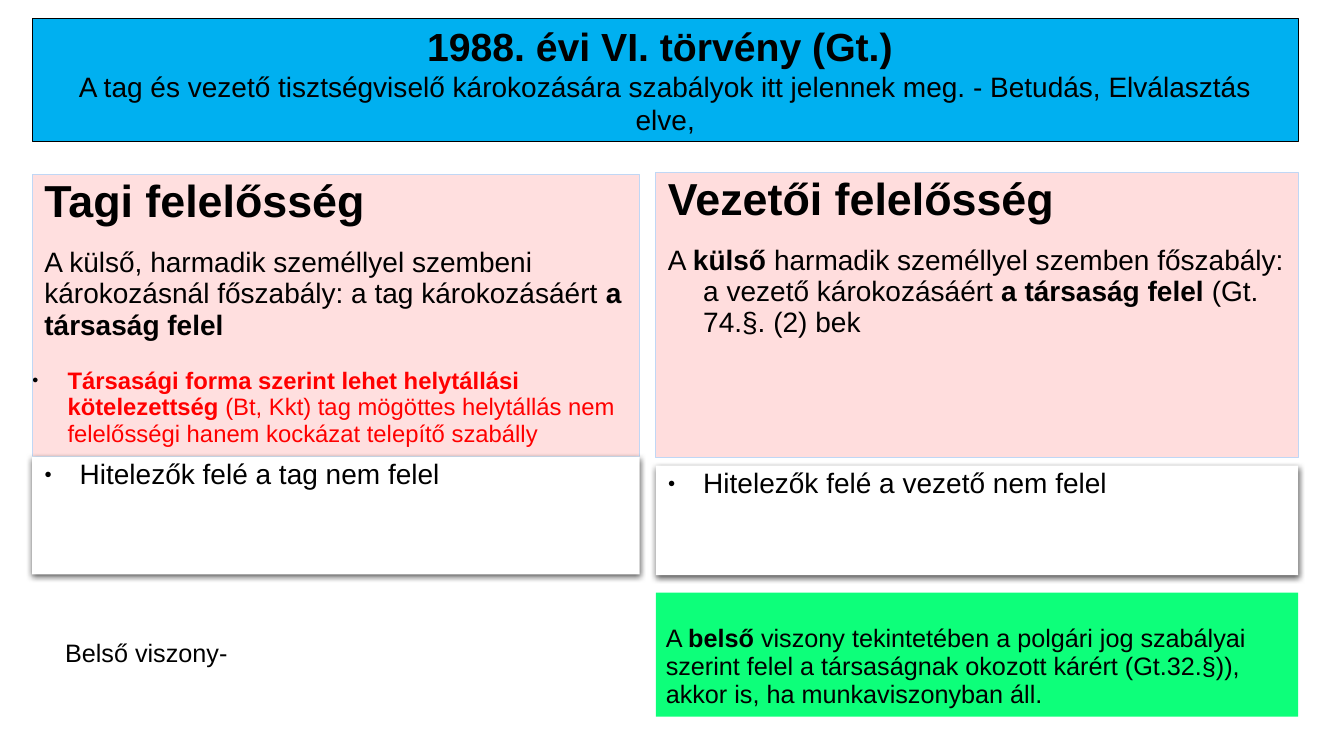
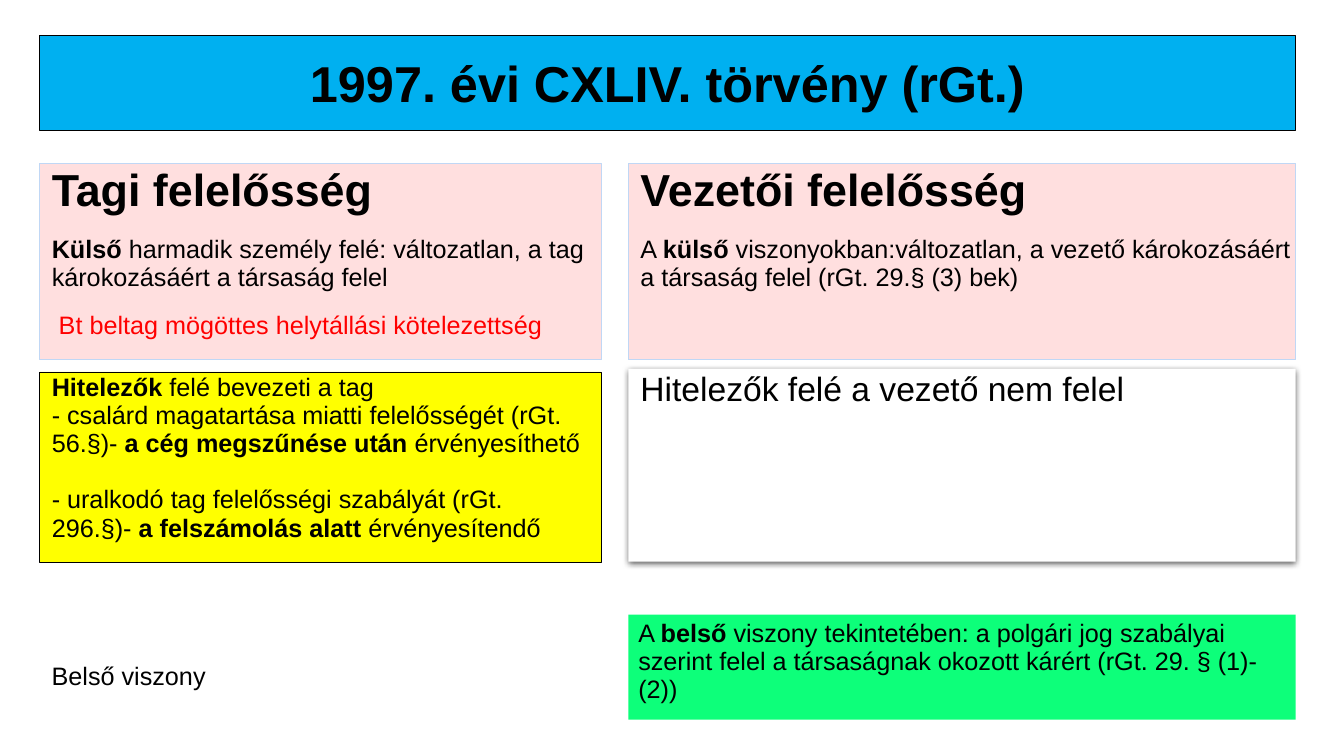
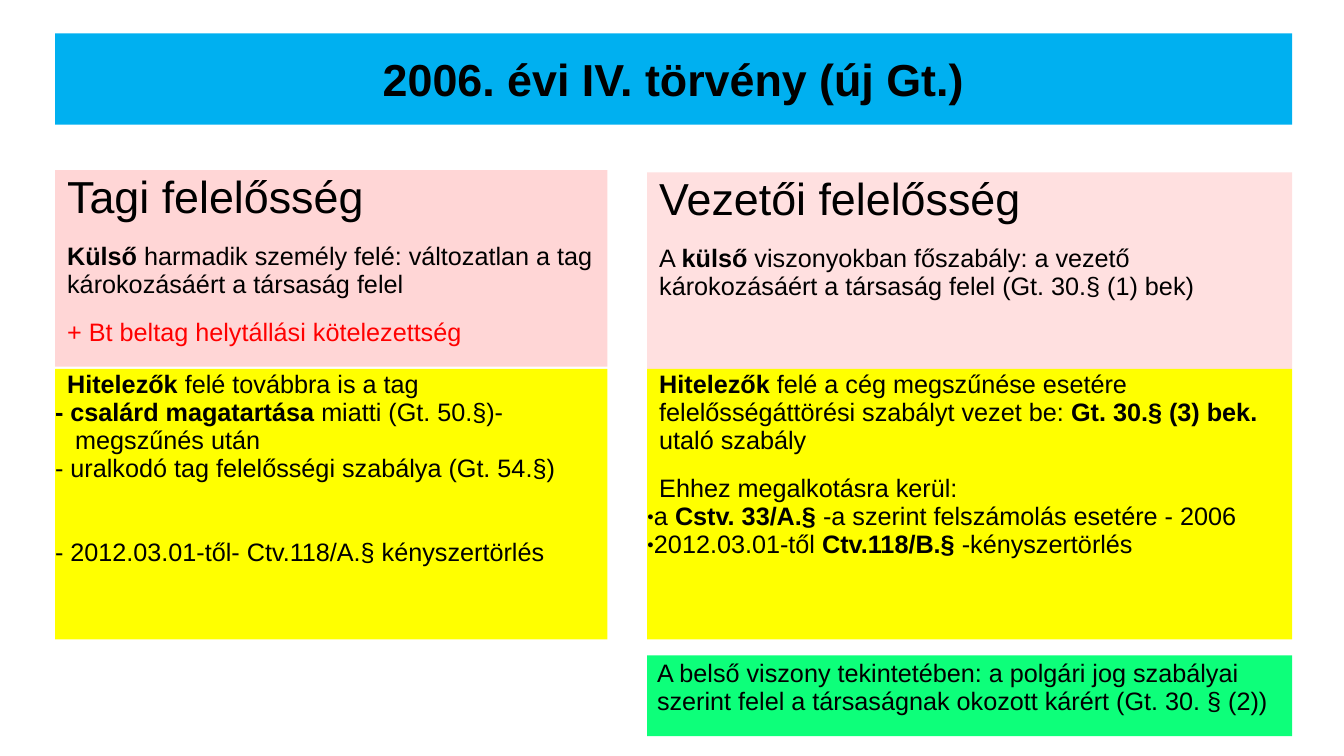
from dataclasses import dataclass
from typing import Optional

from lxml.etree import SubElement
from pptx import Presentation
from pptx.dml.color import RGBColor
from pptx.enum.shapes import MSO_SHAPE as Preset
from pptx.enum.text import MSO_ANCHOR as Anchor, MSO_AUTO_SIZE as AutoSize, PP_ALIGN as Align
from pptx.oxml.ns import qn
from pptx.util import Emu, Inches, Pt


@dataclass(frozen=True)
class Theme:
    font: str = "Arial"
    black: str = "000000"
    white: str = "FFFFFF"
    red: str = "FF0000"
    blue: str = "00B0F0"
    pink: str = "FF8585"
    pale_blue: str = "C0D7F5"
    yellow: str = "FFFF00"
    green: str = "0DFF7A"
    heading: int = 32
    large: int = 24
    medium: int = 20
    body: int = 18
    small: int = 17
    leading: float = 0.93
    gap: float = 14.2


THEME = Theme()
SLIDE_WIDTH, SLIDE_HEIGHT = Inches(13.33), Inches(7.5)


@dataclass(frozen=True)
class Extent:
    start: float
    size: float

    @property
    def end(self) -> float:
        return self.start + self.size


@dataclass(frozen=True)
class Para:
    text: str
    size: int = THEME.body
    color: str = THEME.black
    margin: float = 0.12
    indent: float = 0
    before: float = THEME.gap
    bullet: bool = False
    leading: float = THEME.leading


@dataclass(frozen=True)
class Style:
    fill: Optional[str] = None
    alpha: int = 100
    line: Optional[str] = None
    shadow: bool = False
    insets: tuple = (0, 0.03, 0, 0)


@dataclass(frozen=True)
class Panel:
    column: Extent
    row: Extent
    style: Style
    paras: tuple


@dataclass(frozen=True)
class Title:
    text: str
    sizes: tuple
    row: Extent
    line: Optional[str] = None


@dataclass(frozen=True)
class Page:
    title: Title
    left: Extent
    right: Extent
    panels: tuple


def pink(alpha: int, line: Optional[str] = None) -> Style:
    return Style(THEME.pink, alpha, line)


CARD = Style(THEME.white, shadow=True)
YELLOW = Style(THEME.yellow, insets=(0, 0.02, 0, 0))
YELLOW_FRAMED = Style(THEME.yellow, line=THEME.black, insets=(0, 0.02, 0, 0))
GREEN = Style(THEME.green, insets=(0.1, 0.05, 0.1, 0.05))
GREEN_LOW = Style(THEME.green, insets=(0.1, 0.32, 0.1, 0.05))
PLAIN = Style(insets=(0.1, 0.05, 0.1, 0.05))


def heading(text: str) -> Para:
    return Para(text, THEME.heading)


def flush(text: str, leading: float = THEME.leading) -> Para:
    return Para(text, margin=0, before=0, leading=leading)


def hanging(text: str, size: int = THEME.medium, bullet: bool = False) -> Para:
    return Para(text, size, margin=0.47, indent=-0.35, bullet=bullet)


def dash(text: str, before: float = 0) -> Para:
    return Para(text, margin=0.2, indent=-0.35, before=before)


def tight_bullet(text: str) -> Para:
    return Para(text, margin=0, indent=-0.35, before=0, bullet=True)


def place(shape, column: Extent, row: Extent) -> None:
    shape.left, shape.width = (Emu(round(SLIDE_WIDTH * part / 100)) for part in (column.start, column.size))
    shape.top, shape.height = (Emu(round(SLIDE_HEIGHT * part / 100)) for part in (row.start, row.size))


def set_insets(frame, insets: tuple) -> None:
    frame.margin_left, frame.margin_top, frame.margin_right, frame.margin_bottom = map(Inches, insets)
    frame.word_wrap = True
    frame.auto_size = AutoSize.NONE


def paint(shape, style: Style) -> None:
    if style.fill:
        shape.fill.solid()
        shape.fill.fore_color.rgb = RGBColor.from_string(style.fill)
        if style.alpha < 100:
            color = shape.fill._xPr.find(qn("a:solidFill"))[0]
            SubElement(color, qn("a:alpha"), val=str(style.alpha * 1000))
    if style.line:
        shape.line.color.rgb = RGBColor.from_string(style.line)
        shape.line.width = Pt(0.5)
    else:
        shape.line.fill.background()
    shape.shadow.inherit = False
    if style.shadow:
        effects = shape._element.spPr.find(qn("a:effectLst"))
        shadow = SubElement(effects, qn("a:outerShdw"), blurRad=str(Pt(4.5)), dist=str(Pt(1.5)),
                            dir="5400000", algn="ctr", rotWithShape="0")
        color = SubElement(shadow, qn("a:srgbClr"), val=THEME.black)
        SubElement(color, qn("a:alpha"), val="63000")


def format_run(run, size: int, color: str, bold: bool) -> None:
    run.font.name = THEME.font
    run.font.size = Pt(size)
    run.font.bold = bold
    run.font.color.rgb = RGBColor.from_string(color)


def add_bullet(properties) -> None:
    color = SubElement(properties, qn("a:buClr"))
    SubElement(color, qn("a:srgbClr"), val=THEME.black)
    SubElement(properties, qn("a:buSzPct"), val="45000")
    SubElement(properties, qn("a:buFont"), typeface=THEME.font)
    SubElement(properties, qn("a:buChar"), char="●")


def write_para(target, para: Para) -> None:
    target.alignment = Align.LEFT
    target.line_spacing = para.leading
    target.space_before = Pt(para.before)
    properties = target._p.get_or_add_pPr()
    properties.set("marL", str(Inches(para.margin)))
    properties.set("indent", str(Inches(para.indent)))
    if para.bullet:
        add_bullet(properties)
    for order, piece in enumerate(para.text.split("**")):
        for number, line in enumerate(piece.split("\v")):
            if number:
                target.add_line_break()
            if line:
                run = target.add_run()
                run.text = line
                format_run(run, para.size, para.color, order % 2 == 1)


def draw_title(slide, page: Page) -> None:
    shape = slide.shapes.title
    place(shape, Extent(page.left.start, page.right.end - page.left.start), page.title.row)
    paint(shape, Style(THEME.blue, line=page.title.line))
    frame = shape.text_frame
    set_insets(frame, (0.1, 0.04, 0.1, 0.05))
    frame.vertical_anchor = Anchor.MIDDLE
    frame.text = page.title.text
    para = frame.paragraphs[0]
    para.alignment = Align.CENTER
    for order, run in enumerate(para.runs):
        format_run(run, page.title.sizes[min(order, 1)], THEME.black, order == 0)


def draw_panel(slide, panel: Panel) -> None:
    if panel.style.fill:
        shape = slide.shapes.add_shape(Preset.RECTANGLE, 0, 0, 0, 0)
        paint(shape, panel.style)
    else:
        shape = slide.shapes.add_textbox(0, 0, 0, 0)
    place(shape, panel.column, panel.row)
    frame = shape.text_frame
    set_insets(frame, panel.style.insets)
    frame.vertical_anchor = Anchor.TOP
    for order, para in enumerate(panel.paras):
        write_para(frame.add_paragraph() if order else frame.paragraphs[0], para)


def law_1988() -> Page:
    left, right = Extent(2.4, 45.2), Extent(48.8, 47.8)
    title = Title(
        "1988. évi VI. törvény (Gt.) \vA tag és vezető tisztségviselő károkozására szabályok itt "
        "jelennek meg. - Betudás, Elválasztás\velve,",
        (28, THEME.medium), Extent(2.4, 16.3), THEME.black)
    return Page(title, left, right, (
        Panel(left, Extent(23.1, 37.3), pink(26, THEME.pale_blue), (
            hanging("**Tagi felelősség**", THEME.heading),
            Para("A külső, harmadik személlyel szembeni károkozásnál főszabály: a tag "
                 "károkozásáért **a társaság felel**", THEME.medium),
            Para("**Társasági forma szerint lehet helytállási kötelezettség **(Bt, Kkt) tag mögöttes "
                 "helytállás nem felelősségi hanem kockázat telepítő szabálly",
                 THEME.small, THEME.red, 0.35, -0.35, 19, True))),
        Panel(right, Extent(22.8, 37.7), pink(28, THEME.pale_blue), (
            hanging("**Vezetői felelősség**", THEME.heading),
            hanging("A **külső **harmadik személlyel szemben főszabály: a vezető károkozásáért "
                    "**a társaság felel **(Gt. 74.§. (2) bek"))),
        Panel(right, Extent(61.6, 14.5), CARD,
              (hanging("Hitelezők felé a vezető nem felel", bullet=True),)),
        Panel(left, Extent(60.4, 15.6), CARD,
              (hanging("Hitelezők felé a tag nem felel", bullet=True),)),
        Panel(right, Extent(78.4, 16.4), GREEN_LOW,
              (flush("A **belső** viszony tekintetében a polgári jog szabályai szerint felel a társaságnak "
                     "okozott kárért (Gt.32.§)), akkor is, ha munkaviszonyban áll."),)),
        Panel(Extent(4.1, 36.3), Extent(83.7, 23.6), PLAIN, (flush("Belső viszony-", 1.0),)),
    ))


def law_1997() -> Page:
    left, right = Extent(2.95, 41.8), Extent(46.75, 49.65)
    title = Title("1997. évi CXLIV. törvény (rGt.)", (36,), Extent(4.7, 12.5), THEME.black)
    top_row = Extent(21.6, 26)
    return Page(title, left, right, (
        Panel(left, top_row, pink(26, THEME.pale_blue), (
            heading("**Tagi felelősség**"),
            Para("**Külső** harmadik személy felé: változatlan, a tag károkozásáért a társaság felel"),
            Para(" Bt beltag mögöttes helytállási kötelezettség", color=THEME.red))),
        Panel(right, top_row, pink(26, THEME.pale_blue), (
            heading("**Vezetői felelősség**"),
            Para("A **külső **viszonyokban:változatlan, a vezető károkozásáért a társaság felel "
                 "(rGt. 29.§ (3) bek)"))),
        Panel(right, Extent(48.8, 25.5), CARD,
              (Para("Hitelezők felé a vezető nem felel", THEME.large),)),
        Panel(left, Extent(49.2, 25.2), YELLOW_FRAMED, (
            Para("**Hitelezők **felé bevezeti a tag", before=0),
            Para("- csalárd magatartása miatti felelősségét (rGt. 56.§)- "
                 "**a cég megszűnése után **érvényesíthető", before=0),
            Para("- uralkodó tag felelősségi szabályát (rGt.\v296.§)- "
                 "**a felszámolás alatt **érvényesítendő", before=20))),
        Panel(right, Extent(81.3, 13.9), GREEN,
              (flush("A **belső** viszony tekintetében: a polgári jog szabályai szerint felel a "
                     "társaságnak okozott kárért (rGt. 29. § (1)-(2))"),)),
        Panel(Extent(3.1, 37.4), Extent(86.7, 15.7), PLAIN, (flush("Belső viszony", 1.0),)),
    ))


def law_2006() -> Page:
    left, right = Extent(4.1, 41.1), Extent(48.15, 48)
    title = Title("2006. évi IV. törvény (új Gt.)", (THEME.heading,), Extent(4.4, 12.1))
    middle_row = Extent(48.8, 35.8)
    return Page(title, left, right, (
        Panel(left, Extent(22.5, 26), pink(33), (
            heading("Tagi felelősség"),
            Para("**Külső** harmadik személy felé: változatlan a tag károkozásáért a társaság felel"),
            Para("+ Bt beltag helytállási kötelezettség", color=THEME.red))),
        Panel(right, Extent(22.8, 26), pink(25), (
            heading("Vezetői felelősség"),
            Para("A **külső** viszonyokban főszabály: a vezető károkozásáért a társaság felel "
                 "(Gt. 30.§ (1) bek)"))),
        Panel(right, middle_row, YELLOW, (
            Para("**Hitelezők** felé a cég megszűnése esetére felelősségáttörési szabályt vezet be: "
                 "**Gt. 30.§ (3) bek. **utaló szabály"),
            Para("Ehhez megalkotásra kerül:"),
            tight_bullet("a **Cstv. 33/A.§ **-a szerint felszámolás esetére - 2006"),
            tight_bullet("2012.03.01-től **Ctv.118/B.§** -kényszertörlés"))),
        Panel(left, middle_row, YELLOW, (
            Para("**Hitelezők** felé továbbra is a tag"),
            dash("**- csalárd magatartása **miatti (Gt. 50.§)-megszűnés után"),
            dash("- uralkodó tag felelősségi szabálya (Gt. 54.§)"),
            dash("- 2012.03.01-től- Ctv.118/A.§ kényszertörlés", before=40))),
        Panel(right, Extent(86.7, 10.7), GREEN,
              (flush("A belső viszony tekintetében: a polgári jog szabályai szerint felel a "
                     "társaságnak okozott kárért (Gt. 30. § (2))"),)),
    ))


def main() -> None:
    deck = Presentation()
    deck.slide_width, deck.slide_height = SLIDE_WIDTH, SLIDE_HEIGHT
    title_only = deck.slide_layouts[5]
    for page in (law_1988(), law_1997(), law_2006()):
        slide = deck.slides.add_slide(title_only)
        draw_title(slide, page)
        for panel in page.panels:
            draw_panel(slide, panel)
    deck.save("out.pptx")


if __name__ == "__main__":
    main()
